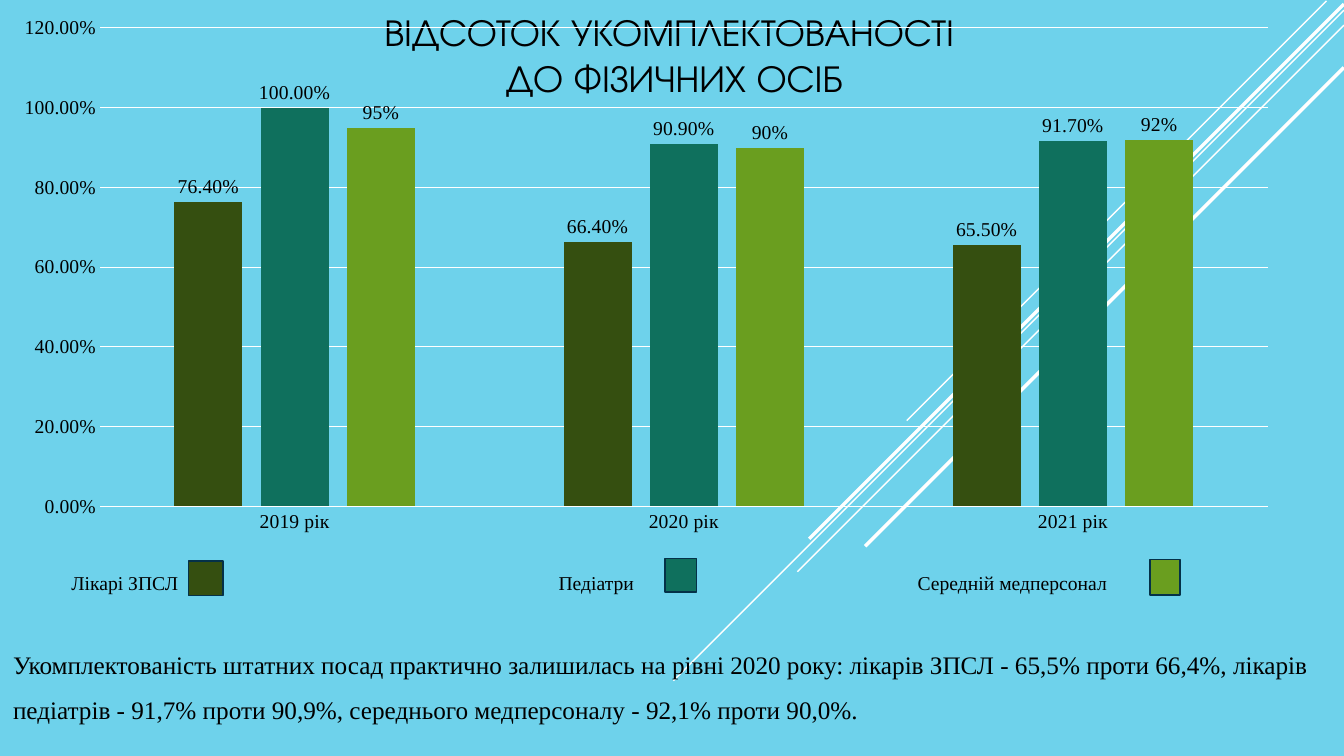
"""Build the slide on staffing percentages by year."""
from dataclasses import dataclass

from lxml import etree
from pptx import Presentation
from pptx.chart.data import CategoryChartData
from pptx.dml.color import RGBColor
from pptx.enum.chart import XL_CHART_TYPE as CT, XL_LABEL_POSITION as LP, XL_TICK_MARK as TM
from pptx.enum.shapes import MSO_CONNECTOR as CN, MSO_SHAPE as SH
from pptx.enum.text import MSO_ANCHOR as VA, PP_ALIGN as AL
from pptx.oxml import parse_xml
from pptx.oxml.ns import nsdecls, qn
from pptx.slide import Slide
from pptx.util import Pt

SKY = RGBColor(0x6E, 0xD2, 0xEB)
WHITE = RGBColor(0xFF, 0xFF, 0xFF)
BLACK = RGBColor(0, 0, 0)
NAVY = RGBColor(0x04, 0x31, 0x48)
OLIVE = RGBColor(0x35, 0x4F, 0x10)
TEAL = RGBColor(0x0F, 0x70, 0x5D)
GREEN = RGBColor(0x6A, 0x9E, 0x1F)
SERIF = "Times New Roman"
SANS = "TeX Gyre Adventor"
YEARS = ("2019 рік", "2020 рік", "2021 рік")
SUMMARY = (
    "Укомплектованість штатних посад практично залишилась на рівні 2020 року: "
    "лікарів ЗПСЛ - 65,5% проти 66,4%, лікарів педіатрів - 91,7% проти 90,9%, "
    "середнього медперсоналу - 92,1% проти 90,0%."
)

Box = tuple[float, float, float, float]


@dataclass(frozen=True)
class Ray:
    """A diagonal at 45 degrees, going down and left from its top end."""
    x: float
    y: float
    run: float
    width: float


@dataclass(frozen=True)
class Staff:
    """A staff group: its bars and its legend entry."""
    name: str
    values: tuple[float, ...]
    fmt: str
    color: RGBColor
    label_x: float
    swatch: Box


RAYS = (
    Ray(947.5, 0.7, 299.8, 1),
    Ray(960, 7.2, 479, 1),
    Ray(960, 18, 390.4, 1),
    Ray(960, 2.9, 382, 2.5),
    Ray(960, 48.2, 342, 2.5),
)
STAFF = (
    Staff("Лікарі ЗПСЛ", (0.764, 0.664, 0.655), "0.00%", OLIVE, 51, (134.6, 401, 24.5, 24.5)),
    Staff("Педіатри", (1, 0.909, 0.917), "0.00%", TEAL, 399, (475.2, 398.9, 22.3, 23.8)),
    Staff("Середній медперсонал", (0.95, 0.9, 0.92), "0%", GREEN, 655.5,
          (821.5, 399.6, 21.6, 25.2)),
)


def add_text(s: Slide, text: str, box: Box, *, size: float, font: str = SERIF,
             align: AL = AL.LEFT, anchor: VA = VA.TOP, spacing: float = 1) -> None:
    """Add a black text box without insets."""
    tf = s.shapes.add_textbox(*map(Pt, box)).text_frame
    tf.word_wrap = True
    tf.vertical_anchor = anchor
    tf.margin_left = tf.margin_right = tf.margin_top = tf.margin_bottom = 0
    p = tf.paragraphs[0]
    p.text = text
    p.alignment = align
    p.line_spacing = spacing
    for r in p.runs:
        set_font(r.font, size, font)


def set_font(font, size: float = 14, name: str = SERIF) -> None:
    """Set size, face and black colour."""
    font.size = Pt(size)
    font.name = name
    font.color.rgb = BLACK


def add_ray(s: Slide, ray: Ray) -> None:
    """Draw one white diagonal."""
    ends = (ray.x, ray.y, ray.x - ray.run, ray.y + ray.run)
    line = s.shapes.add_connector(CN.STRAIGHT, *map(Pt, ends))
    line.line.color.rgb = WHITE
    line.line.width = Pt(ray.width)
    etree.SubElement(line._element.spPr, qn("a:effectLst"))


def add_legend_entry(s: Slide, staff: Staff) -> None:
    """Draw a group name and its colour swatch."""
    add_text(s, staff.name, (staff.label_x, 407.5, 160, 17), size=14)
    sp = s.shapes.add_shape(SH.RECTANGLE, *map(Pt, staff.swatch))
    sp.shadow.inherit = False
    sp.fill.solid()
    sp.fill.fore_color.rgb = staff.color
    sp.line.color.rgb = NAVY
    sp.line.width = Pt(1.25)


def add_staff_chart(s: Slide) -> None:
    """Add the clustered columns of all groups by year."""
    data = CategoryChartData(number_format="0.00%")
    data.categories = YEARS
    for staff in STAFF:
        data.add_series(staff.name, staff.values)
    box = map(Pt, (5.8, 0, 900, 399.6))
    chart = s.shapes.add_chart(CT.COLUMN_CLUSTERED, *box, data).chart
    chart.has_legend = chart.has_title = False
    set_font(chart.font)
    plot = chart.plots[0]
    plot.gap_width, plot.overlap, plot.vary_by_categories = 219, -27, False
    for series, staff in zip(plot.series, STAFF):
        series.format.fill.solid()
        series.format.fill.fore_color.rgb = staff.color
        labels = series.data_labels
        labels.show_value = True
        labels.position = LP.OUTSIDE_END
        labels.number_format, labels.number_format_is_linked = staff.fmt, False
        set_font(labels.font)

    years, share = chart.category_axis, chart.value_axis
    for axis in (years, share):
        axis.major_tick_mark = axis.minor_tick_mark = TM.NONE
        set_font(axis.tick_labels.font)
    share.minimum_scale, share.maximum_scale, share.major_unit = 0, 1.2, 0.2
    share.tick_labels.number_format = "0.00%"
    share.tick_labels.number_format_is_linked = False
    share.format.line.fill.background()
    for line in (years.format.line, share.major_gridlines.format.line):
        line.color.rgb = WHITE
        line.width = Pt(0.75)
    place_plot(chart, {"x": 0.073, "y": 0.05, "w": 0.927, "h": 0.855})


def place_plot(chart, frame: dict[str, float]) -> None:
    """Fix the inner plot area as shares of the chart."""
    area = chart._chartSpace.find(".//" + qn("c:plotArea"))
    for old in area.findall(qn("c:layout")):
        area.remove(old)
    sizes = "".join(f'<c:{key} val="{val}"/>' for key, val in frame.items())
    area.insert(0, parse_xml(
        f'<c:layout {nsdecls("c")}><c:manualLayout><c:layoutTarget val="inner"/>'
        f'<c:xMode val="edge"/><c:yMode val="edge"/>{sizes}</c:manualLayout></c:layout>'))


def main() -> None:
    """Build and save the slide."""
    prs = Presentation()
    prs.slide_width, prs.slide_height = Pt(960), Pt(540)
    s = prs.slides.add_slide(prs.slide_layouts[6])
    s.background.fill.solid()
    s.background.fill.fore_color.rgb = SKY
    for ray in RAYS:
        add_ray(s, ray)
    add_text(s, "ВІДСОТОК УКОМПЛЕКТОВАНОСТІ \vДО ФІЗИЧНИХ ОСІБ", (225.4, 6.5, 512.6, 64.8),
             size=27, font=SANS, align=AL.CENTER, anchor=VA.BOTTOM)
    add_text(s, SUMMARY, (9.3, 453, 943, 66), size=18, spacing=1.5)
    add_staff_chart(s)
    for staff in STAFF:
        add_legend_entry(s, staff)
    prs.save("out.pptx")


if __name__ == "__main__":
    main()
